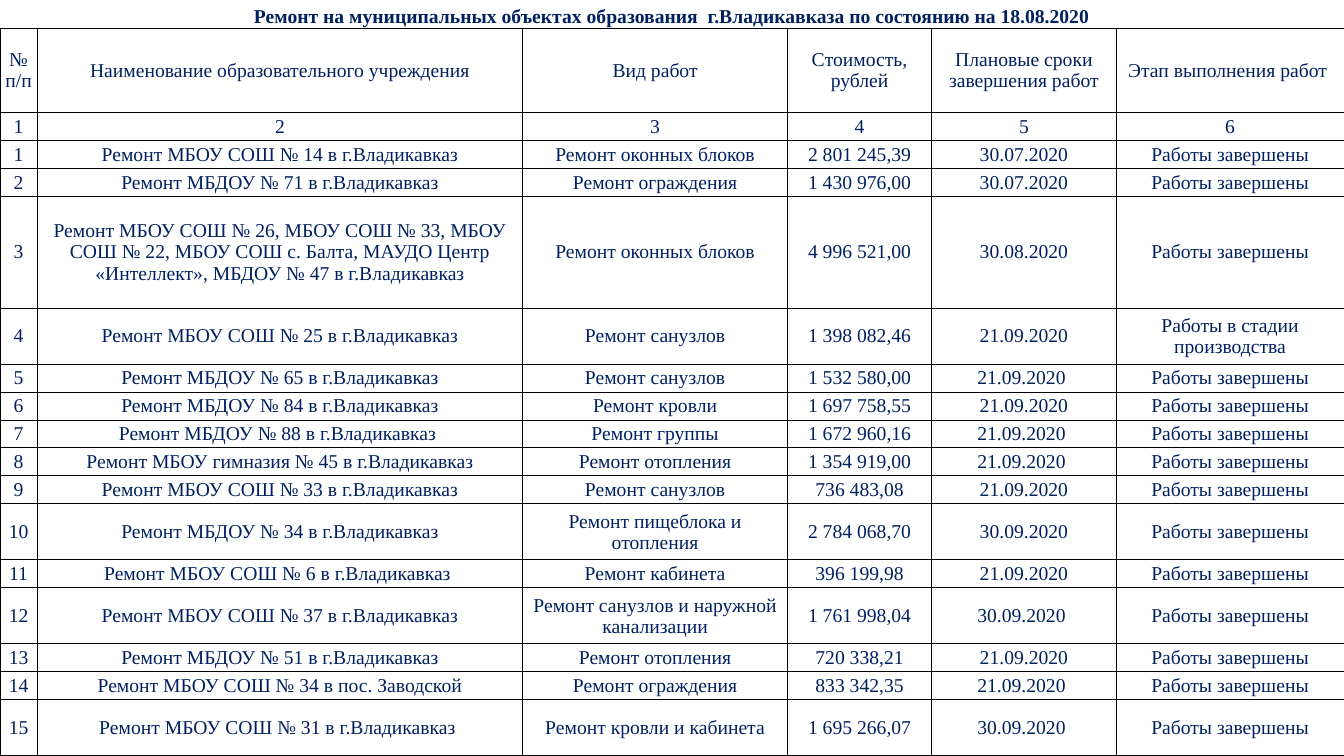
from lxml import etree
from pptx import Presentation
from pptx.dml.color import RGBColor
from pptx.enum.text import MSO_ANCHOR, PP_ALIGN
from pptx.oxml.ns import qn
from pptx.util import Pt

CENTER = PP_ALIGN.CENTER
MIDDLE, BOTTOM = MSO_ANCHOR.MIDDLE, MSO_ANCHOR.BOTTOM

COLORS = {"text": "002060", "fill": "FFFFFF", "border": "000000"}
FONT = "Times New Roman"
SLIDE_W, SLIDE_H = 960, 540

TITLE = "Ремонт на муниципальных объектах образования  г.Владикавказа по состоянию на 18.08.2020"
HEADERS = ["№ п/п", "Наименование образовательного учреждения", "Вид работ",
           "Cтоимость, рублей", "Плановые сроки завершения работ", "Этап выполнения работ "]
DONE = "Работы завершены"
IN_PROGRESS = "Работы в стадии производства"

# Institution, kind of work, cost, planned date, stage
REPAIRS = [
    ("Ремонт МБОУ СОШ № 14 в г.Владикавказ", "Ремонт оконных блоков", "2 801 245,39", "30.07.2020", DONE),
    ("Ремонт МБДОУ № 71 в г.Владикавказ", "Ремонт ограждения", "1 430 976,00", "30.07.2020", DONE),
    ("Ремонт МБОУ СОШ № 26, МБОУ СОШ № 33, МБОУ СОШ № 22, МБОУ СОШ с. Балта, "
     "МАУДО Центр «Интеллект», МБДОУ № 47 в г.Владикавказ",
     "Ремонт оконных блоков", "4 996 521,00", "30.08.2020", DONE),
    ("Ремонт МБОУ СОШ № 25 в г.Владикавказ", "Ремонт санузлов", "1 398 082,46", " 21.09.2020 ", IN_PROGRESS),
    ("Ремонт МБДОУ № 65 в г.Владикавказ", "Ремонт санузлов", "1 532 580,00", "21.09.2020 ", DONE),
    ("Ремонт МБДОУ № 84 в г.Владикавказ", "Ремонт кровли", "1 697 758,55", "21.09.2020", DONE),
    ("Ремонт МБДОУ № 88 в г.Владикавказ ", "Ремонт группы", "1 672 960,16", "21.09.2020 ", DONE),
    ("Ремонт МБОУ гимназия № 45 в г.Владикавказ", "Ремонт отопления", "1 354 919,00", "21.09.2020 ", DONE),
    ("Ремонт МБОУ СОШ № 33 в г.Владикавказ", "Ремонт санузлов", "736 483,08", "21.09.2020", DONE),
    ("Ремонт МБДОУ № 34 в г.Владикавказ", "Ремонт пищеблока и отопления", "2 784 068,70", "30.09.2020", DONE),
    ("Ремонт МБОУ СОШ № 6 в г.Владикавказ ", "Ремонт кабинета", "396 199,98", "21.09.2020", DONE),
    ("Ремонт МБОУ СОШ № 37 в г.Владикавказ", "Ремонт санузлов и наружной канализации",
     "1 761 998,04", "30.09.2020 ", DONE),
    ("Ремонт МБДОУ № 51 в г.Владикавказ", "Ремонт отопления", "720 338,21", "21.09.2020", DONE),
    ("Ремонт МБОУ СОШ № 34 в пос. Заводской", "Ремонт ограждения", "833 342,35", "21.09.2020 ", DONE),
    ("Ремонт МБОУ СОШ № 31 в г.Владикавказ ", "Ремонт кровли и кабинета", "1 695 266,07", "30.09.2020 ", DONE),
]

# Column widths as shares of the table; row heights in text lines
COL_WIDTHS = [26.6, 346.8, 189.2, 102.9, 131.9, 162.6]
ROW_LINES = [1, 3, 1, 1, 1, 4, 2, 1, 1, 1, 1, 1, 2, 1, 2, 1, 1, 2]


def set_borders(cell, sides):
    """Draw thin lines on the named sides and none on the others."""
    tcPr = cell._tc.get_or_add_tcPr()
    for i, side in enumerate("LRTB"):
        ln = etree.Element(qn(f"a:ln{side}"), w=str(Pt(0.5)))
        if side in sides:
            fill = etree.SubElement(ln, qn("a:solidFill"))
            etree.SubElement(fill, qn("a:srgbClr"), val=COLORS["border"])
        else:
            etree.SubElement(ln, qn("a:noFill"))
        tcPr.insert(i, ln)


def write_cell(cell, text, size=14, bold=False, anchor=MIDDLE, sides="LRTB"):
    cell.fill.solid()
    cell.fill.fore_color.rgb = RGBColor.from_string(COLORS["fill"])
    set_borders(cell, sides)
    cell.margin_left = cell.margin_right = cell.margin_top = Pt(0.7)
    cell.margin_bottom = 0
    cell.vertical_anchor = anchor
    p = cell.text_frame.paragraphs[0]
    p.alignment = CENTER
    r = p.add_run()
    r.text = text
    r.font.name, r.font.size, r.font.bold = FONT, Pt(size), bold
    r.font.color.rgb = RGBColor.from_string(COLORS["text"])


def add_repair_table(slide, left, top, width, height):
    shape = slide.shapes.add_table(len(ROW_LINES), len(COL_WIDTHS),
                                   Pt(left), Pt(top), Pt(width), Pt(height))
    table = shape.table
    table.first_row = table.horz_banding = False
    for col, share in zip(table.columns, COL_WIDTHS):
        col.width = Pt(width * share / sum(COL_WIDTHS))
    for row, lines in zip(table.rows, ROW_LINES):
        row.height = Pt(height * lines / sum(ROW_LINES))

    # Title across all columns
    for cell in table.rows[0].cells:
        set_borders(cell, "B")
    title = table.cell(0, 0)
    title.merge(table.cell(0, len(COL_WIDTHS) - 1))
    for ln in list(title._tc.tcPr):
        title._tc.tcPr.remove(ln)
    write_cell(title, TITLE, bold=True, anchor=BOTTOM, sides="B")

    # Headings, column numbers and numbered repairs
    col_numbers = [str(n) for n in range(1, len(HEADERS) + 1)]
    repairs = [(str(n), *repair) for n, repair in enumerate(REPAIRS, 1)]
    for i, values in enumerate([HEADERS, col_numbers, *repairs], 1):
        for j, text in enumerate(values):
            write_cell(table.cell(i, j), text)


def main():
    prs = Presentation()
    prs.slide_width, prs.slide_height = Pt(SLIDE_W), Pt(SLIDE_H)
    slide = prs.slides.add_slide(prs.slide_layouts[6])
    add_repair_table(slide, 0, 0, SLIDE_W, SLIDE_H)
    prs.save("out.pptx")


if __name__ == "__main__":
    main()
